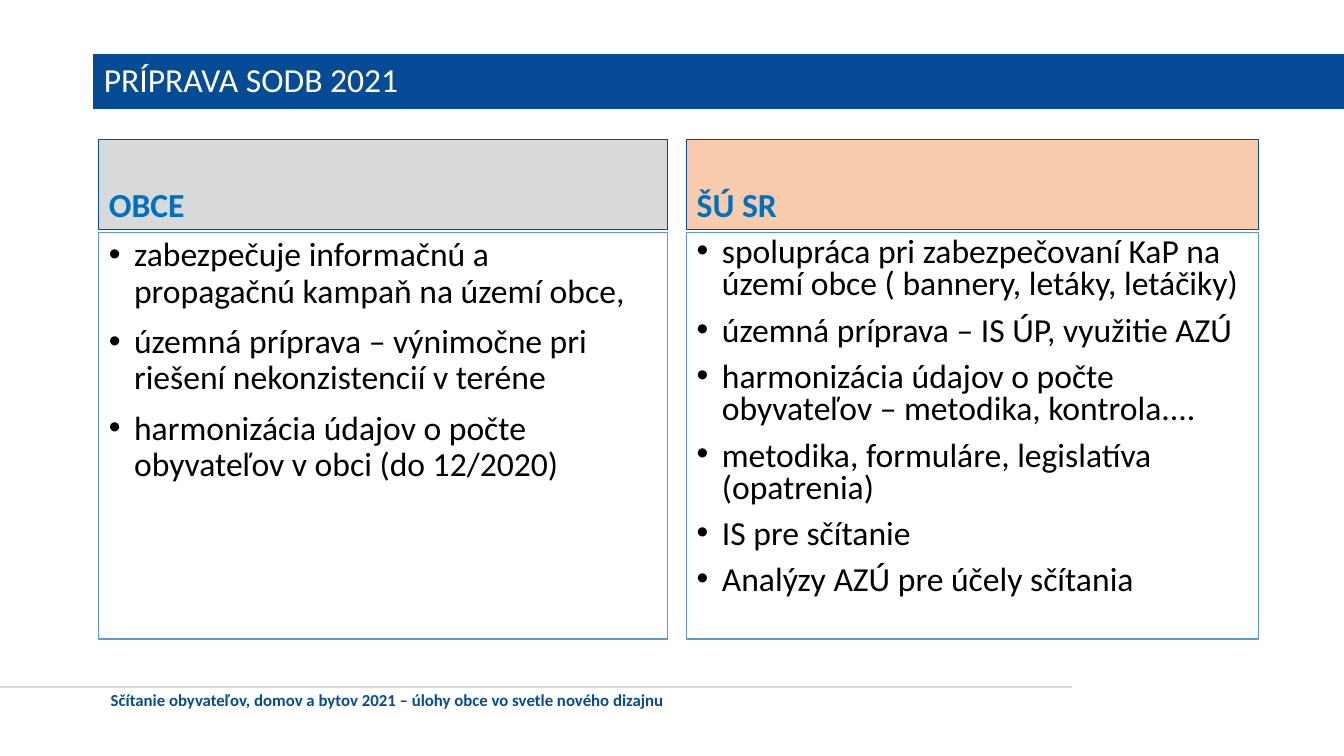
"""Build the slide on tasks of municipalities and the statistical office for SODB 2021."""
from lxml.etree import SubElement
from pptx import Presentation
from pptx.dml.color import RGBColor
from pptx.enum.shapes import MSO_CONNECTOR
from pptx.enum.text import MSO_ANCHOR as Anchor, MSO_AUTO_SIZE as AutoSize, PP_ALIGN as Align
from pptx.oxml.ns import qn
from pptx.util import Inches, Pt

NAVY = RGBColor(0x05, 0x4B, 0x96)
BLUE = RGBColor(0x00, 0x70, 0xC0)
SKY = RGBColor(0x5B, 0x9B, 0xD5)
GREY = RGBColor(0xD8, 0xD9, 0xDA)
PEACH = RGBColor(0xF8, 0xCB, 0xAD)
WHITE = RGBColor(0xFF, 0xFF, 0xFF)
BLACK = RGBColor(0x00, 0x00, 0x00)

COLUMNS = [
    (6.81, 5.67, PEACH, 0.8, "ŠÚ SR", [
        "spolupráca pri zabezpečovaní KaP na území obce ( bannery, letáky, letáčiky)",
        "územná príprava – IS ÚP, využitie AZÚ",
        "harmonizácia údajov o počte obyvateľov – metodika, kontrola....",
        "metodika, formuláre, legislatíva (opatrenia)",
        "IS pre sčítanie",
        "Analýzy AZÚ pre účely sčítania",
    ]),
    (0.98, 5.64, GREY, 0.9, "OBCE", [
        "zabezpečuje informačnú a propagačnú kampaň na území obce,",
        "územná príprava – výnimočne pri riešení nekonzistencií v teréne",
        "harmonizácia údajov o počte obyvateľov v obci (do 12/2020)",
    ]),
][::-1]


def place(box, left, top, width, height, fill=None, line=None):
    box.left, box.top = Inches(left), Inches(top)
    box.width, box.height = Inches(width), Inches(height)
    if fill is not None:
        box.fill.solid()
        box.fill.fore_color.rgb = fill
    if line is not None:
        box.line.color.rgb = line
        box.line.width = Pt(0.75)


def write(box, lines, color, anchor, size=24, bold=False, spacing=0.9, bullets=False):
    frame = box.text_frame
    frame.text = "\n".join(lines)
    frame.word_wrap = True
    frame.auto_size = AutoSize.NONE
    frame.vertical_anchor = anchor
    for number, para in enumerate(frame.paragraphs):
        para.alignment = Align.LEFT
        para.line_spacing = spacing
        para.space_before = Pt(10 if number else 0)
        if bullets:
            props = para._p.get_or_add_pPr()
            props.set("marL", str(Inches(0.25)))
            props.set("indent", str(-Inches(0.25)))
            SubElement(props, qn("a:buFont")).set("typeface", "Arial")
            SubElement(props, qn("a:buChar")).set("char", "•")
        for span in para.runs:
            span.font.name = "Calibri"
            span.font.size = Pt(size)
            span.font.bold = bold
            span.font.color.rgb = color


deck = Presentation()
deck.slide_width, deck.slide_height = Inches(13.33), Inches(7.5)
page = deck.slides.add_slide(deck.slide_layouts.get_by_name("Comparison"))
_, left_head, left_list, right_head, right_list = page.placeholders

title = page.shapes.title
place(title, 0.93, 0.54, 12.42, 0.54, NAVY, NAVY)
write(title, ["PRÍPRAVA SODB 2021"], WHITE, Anchor.MIDDLE)

pairs = [(left_head, left_list), (right_head, right_list)]
for (head, body), (left, width, fill, spacing, name, tasks) in zip(pairs, COLUMNS):
    place(head, left, 1.38, width, 0.9, fill, NAVY)
    write(head, [name], BLUE, Anchor.BOTTOM, bold=True)
    place(body, left, 2.31, width, 4.03, line=SKY)
    write(body, tasks, BLACK, Anchor.TOP, spacing=spacing, bullets=True)

rule = page.shapes.add_connector(
    MSO_CONNECTOR.STRAIGHT, Inches(0), Inches(6.82), Inches(10.63), Inches(6.82))
rule.line.color.rgb = GREY
rule.line.width = Pt(1.5)
SubElement(rule._element.spPr, qn("a:effectLst"))

footer = page.shapes.add_textbox(0, 0, 0, 0)
place(footer, 1, 6.85, 9.63, 0.4)
footer.text_frame.margin_top = Inches(0.02)
write(footer, ["Sčítanie obyvateľov, domov a bytov 2021 – úlohy obce vo svetle nového dizajnu"],
      NAVY, Anchor.TOP, size=12, bold=True)

deck.save("out.pptx")
